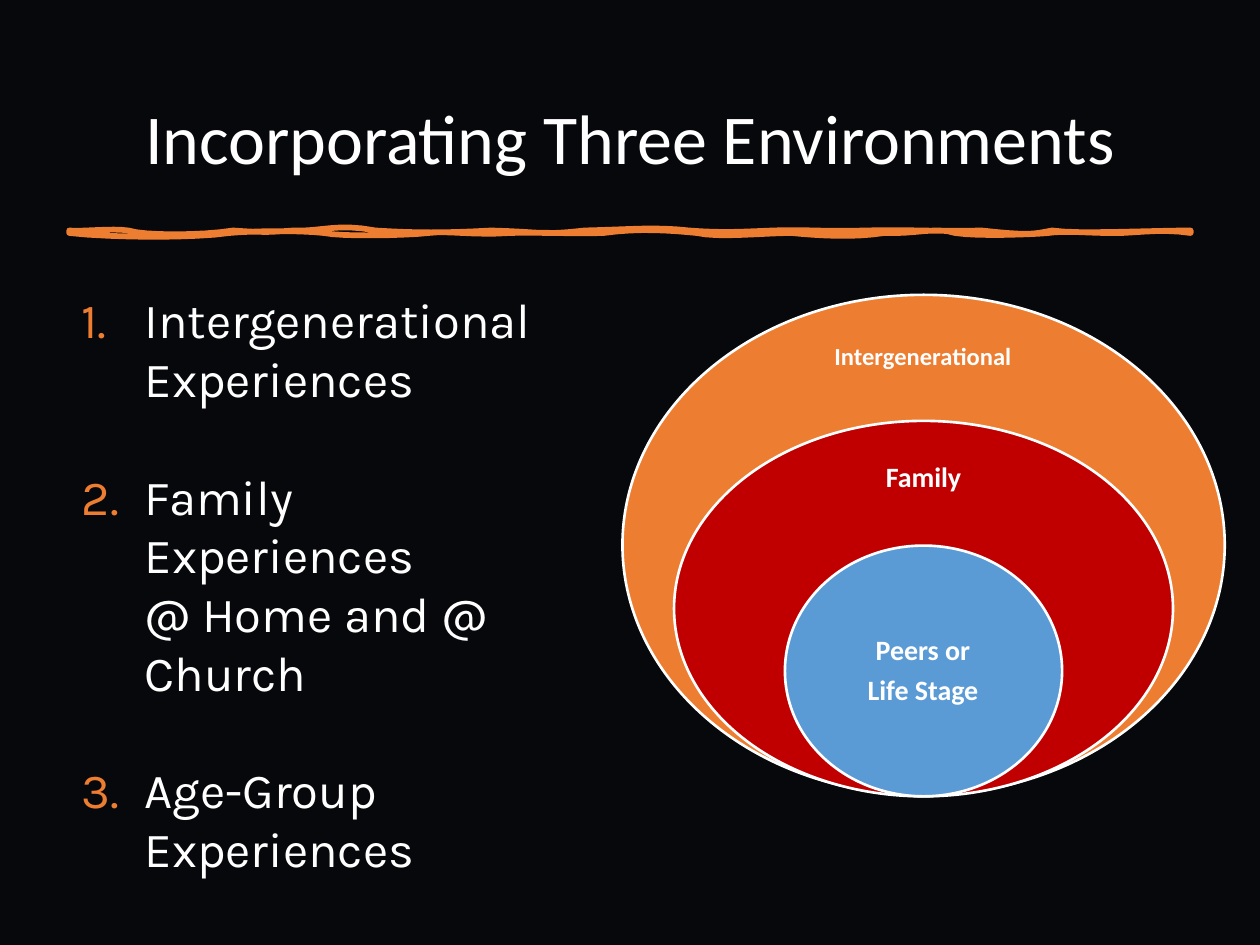
from dataclasses import dataclass

from lxml.etree import SubElement
from pptx import Presentation
from pptx.dml.color import RGBColor as Rgb
from pptx.enum.shapes import MSO_SHAPE as Shape
from pptx.enum.text import MSO_ANCHOR as Anchor, PP_ALIGN as Align
from pptx.oxml.ns import qn
from pptx.slide import Slide
from pptx.text.text import TextFrame as Frame
from pptx.util import Inches, Pt


@dataclass(frozen=True)
class Theme:
    back: str = "07080B"
    white: str = "FFFFFF"
    orange: str = "ED7D31"
    red: str = "C00000"
    blue: str = "5B9BD5"
    head: str = "Calibri"
    body: str = "Karla"
    title: int = 40
    list: int = 28
    label: int = 16
    small: int = 14


@dataclass(frozen=True)
class Box:
    left: float
    top: float
    width: float
    height: float

    def emu(self) -> list[int]:
        return [Inches(n) for n in (self.left, self.top, self.width, self.height)]


@dataclass(frozen=True)
class Ring:
    oval: Box
    label: Box
    fill: str
    text: str
    size: int
    inset: float


THEME = Theme()
STEPS = (
    "Intergenerational Experiences",
    "Family Experiences \v@ Home and @ Church",
    "Age-Group Experiences",
)
RINGS = (
    Ring(Box(4.94, 2.34, 4.78, 3.97), Box(6.49, 2.54, 1.67, 0.6),
         THEME.orange, "Intergenerational", THEME.small, 0.11),
    Ring(Box(5.35, 3.34, 3.96, 2.98), Box(6.41, 3.52, 1.84, 0.56),
         THEME.red, "Family", THEME.label, 0.12),
    Ring(Box(6.23, 4.33, 2.2, 1.99), Box(6.55, 4.83, 1.55, 0.99),
         THEME.blue, "Peers or\nLife Stage", THEME.label, 0.12),
)
START = (0.55, 1.83)
UPPER = (
    (0.64, 1.84, 0.89, 1.81, 1.02, 1.83), (1.14, 1.87, 1.6, 1.87, 1.85, 1.83),
    (2.13, 1.85, 2.16, 1.84, 2.33, 1.83), (2.54, 1.84, 2.68, 1.77, 2.98, 1.83),
    (3.31, 1.85, 3.52, 1.85, 3.9, 1.83), (4.31, 1.84, 4.28, 1.87, 4.64, 1.83),
    (5.03, 1.82, 5.2, 1.8, 5.47, 1.83), (5.73, 1.85, 5.88, 1.84, 6.13, 1.83),
    (6.41, 1.82, 6.51, 1.84, 6.87, 1.83), (7.21, 1.82, 7.41, 1.84, 7.79, 1.83),
    (8.17, 1.87, 8.19, 1.86, 8.35, 1.83), (8.55, 1.86, 9.13, 1.83, 9.45, 1.83),
)
LOWER = (
    (9.45, 1.84, 9.45, 1.85, 9.45, 1.85), (9.2, 1.81, 8.95, 1.86, 8.8, 1.85),
    (8.63, 1.85, 8.45, 1.83, 8.32, 1.85), (8.22, 1.86, 7.77, 1.88, 7.58, 1.85),
    (7.43, 1.8, 7.27, 1.86, 7.02, 1.85), (6.76, 1.89, 6.5, 1.87, 6.28, 1.85),
    (6.07, 1.85, 5.7, 1.89, 5.53, 1.85), (5.32, 1.83, 5.08, 1.81, 4.79, 1.85),
    (4.5, 1.86, 4.35, 1.84, 4.05, 1.85), (3.74, 1.87, 3.56, 1.83, 3.4, 1.85),
    (3.23, 1.87, 2.71, 1.88, 2.57, 1.85), (2.38, 1.83, 2.06, 1.83, 1.82, 1.85),
    (1.56, 1.89, 0.91, 1.89, 0.55, 1.85),
)


def style(frame: Frame, face: str, size: int, bold: bool = False) -> None:
    for para in frame.paragraphs:
        for run in para.runs:
            run.font.name = face
            run.font.size = Pt(size)
            run.font.bold = bold
            run.font.color.rgb = Rgb.from_string(THEME.white)


def add_title(slide: Slide, text: str) -> None:
    title = slide.shapes.title
    title.left, title.top, title.width, title.height = Box(0.55, 0.4, 8.9, 1.45).emu()
    frame = title.text_frame
    frame.text = text
    frame.vertical_anchor = Anchor.MIDDLE
    para = frame.paragraphs[0]
    para.alignment = Align.CENTER
    para.line_spacing = 0.9
    style(frame, THEME.head, THEME.title)


def add_rule(slide: Slide, count: int = 8) -> None:
    points = []
    last = START
    for curve in UPPER + LOWER:
        knots = (last, curve[:2], curve[2:4], curve[4:])
        for step in range(1, count + 1):
            t = step / count
            parts = ((1 - t) ** 3, 3 * t * (1 - t) ** 2, 3 * t * t * (1 - t), t ** 3)
            points.append(tuple(
                Inches(sum(part * knot[axis] for part, knot in zip(parts, knots)))
                for axis in (0, 1)))
        last = curve[4:]
    pen = slide.shapes.build_freeform(*(Inches(n) for n in START))
    pen.add_line_segments(points, close=True)
    rule = pen.convert_to_shape()
    rule.shadow.inherit = False
    rule.fill.background()
    rule.line.color.rgb = Rgb.from_string(THEME.orange)
    rule.line.width = Pt(3.25)


def add_steps(slide: Slide) -> None:
    frame = slide.shapes.add_textbox(*Box(0.55, 2.25, 4.03, 4.91).emu()).text_frame
    frame.word_wrap = True
    for index, text in enumerate(STEPS):
        para = frame.add_paragraph() if index else frame.paragraphs[0]
        para.text = text
        props = para._p.get_or_add_pPr()
        props.set("marL", str(Inches(0.5)))
        props.set("indent", str(-Inches(0.5)))
        tint = SubElement(props, qn("a:buClr"))
        SubElement(tint, qn("a:srgbClr"), val=THEME.orange)
        SubElement(props, qn("a:buFont"), typeface=THEME.body)
        SubElement(props, qn("a:buAutoNum"), type="arabicPeriod")
        if index:
            para.space_before = Pt(33.5)
    style(frame, THEME.body, THEME.list)


def add_ring(slide: Slide, ring: Ring) -> None:
    oval = slide.shapes.add_shape(Shape.OVAL, *ring.oval.emu())
    oval.shadow.inherit = False
    oval.fill.solid()
    oval.fill.fore_color.rgb = Rgb.from_string(ring.fill)
    oval.line.color.rgb = Rgb.from_string(THEME.white)
    oval.line.width = Pt(1.5)
    frame = slide.shapes.add_textbox(*ring.label.emu()).text_frame
    frame.word_wrap = True
    frame.vertical_anchor = Anchor.MIDDLE
    frame.margin_left = frame.margin_right = Inches(ring.inset)
    frame.margin_top = frame.margin_bottom = Inches(ring.inset)
    frame.text = ring.text
    for para in frame.paragraphs:
        para.alignment = Align.CENTER
        para.line_spacing = 0.9
        para.space_after = Pt(0.35 * ring.size)
    style(frame, THEME.head, ring.size, bold=True)


def main() -> None:
    deck = Presentation()
    deck.slide_width, deck.slide_height = Inches(10), Inches(7.5)
    slide = deck.slides.add_slide(deck.slide_layouts[5])
    back = slide.background.fill
    back.solid()
    back.fore_color.rgb = Rgb.from_string(THEME.back)
    add_title(slide, "Incorporating Three Environments")
    add_rule(slide)
    add_steps(slide)
    for ring in RINGS:
        add_ring(slide, ring)
    deck.save("out.pptx")


if __name__ == "__main__":
    main()
